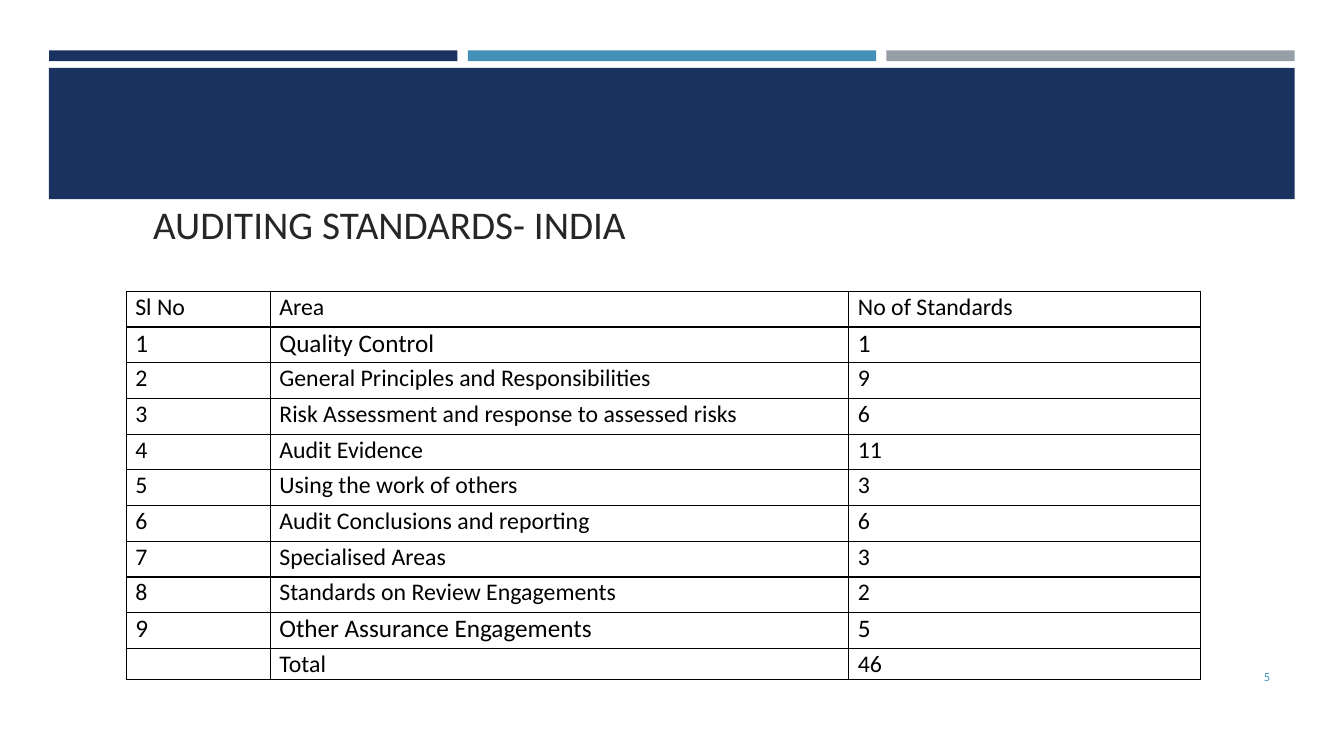
from lxml.etree import SubElement
from pptx import Presentation
from pptx.dml.color import RGBColor
from pptx.enum.shapes import MSO_SHAPE
from pptx.enum.text import MSO_ANCHOR, PP_ALIGN
from pptx.oxml.ns import qn
from pptx.util import Cm, Pt

FONT = "Calibri"
NAVY, BLUE, GREY, BLACK = "1A3260", "4590B8", "969FA7", "000000"

TITLE = "AUDITING STANDARDS- INDIA"
PAGE = "5"
ROWS = [
    ("Sl No", "Area", "No of Standards"),
    ("1", "Quality Control", "1"),
    ("2", "General Principles and Responsibilities", "9"),
    ("3", "Risk Assessment and response to assessed risks", "6"),
    ("4", "Audit Evidence", "11"),
    ("5", "Using the work of others", "3"),
    ("6", "Audit Conclusions and reporting", "6"),
    ("7", "Specialised Areas", "3"),
    ("8", "Standards on Review Engagements", "2"),
    ("9", "Other Assurance Engagements", "5"),
    ("", "Total", "46"),
]
LARGE_ROWS = {1, 9}
COL_WIDTHS = (3.63, 14.58, 8.86)
ROW_HEIGHT, TOTAL_HEIGHT = 0.9, 0.79
TABLE_LEFT, TABLE_TOP = 3.18, 7.34

BAR_LEFT, BAR_TOP, BAR_WIDTH, BAR_HEIGHT, BAR_GAP = 1.24, 1.27, 10.29, 0.27, 0.26
BANNER = (1.23, 1.71, 31.4, 3.31)
TITLE_BOX = (3.61, 2.72, 26.67, 3.63)
PAGE_BOX = (29.34, 16.54, 2.92, 1.02)


def rgb(value):
    return RGBColor.from_string(value)


def apply(obj, **values):
    for name, value in values.items():
        setattr(obj, name, value)


def add_bar(s, box, color):
    sp = s.shapes.add_shape(MSO_SHAPE.RECTANGLE, *map(Cm, box))
    sp.shadow.inherit = False
    sp.fill.solid()
    sp.fill.fore_color.rgb = rgb(color)
    sp.line.fill.background()


def write(p, text, size, color, align):
    p.alignment = align
    r = p.add_run()
    apply(r.font, name=FONT, size=Pt(size))
    r.font.color.rgb = rgb(color)
    r.text = text


def add_text(s, box, text, size, color, align, anchor):
    tf = s.shapes.add_textbox(*map(Cm, box)).text_frame
    apply(tf, word_wrap=True, vertical_anchor=anchor)
    write(tf.paragraphs[0], text, size, color, align)


def add_borders(cell):
    """Put a black 1 pt line on all four sides, ahead of the cell's fill."""
    tcPr = cell._tc.get_or_add_tcPr()
    for side in ("a:lnL", "a:lnR", "a:lnT", "a:lnB"):
        ln = SubElement(tcPr, qn(side), w=str(Pt(1)))
        fill = SubElement(ln, qn("a:solidFill"))
        SubElement(fill, qn("a:srgbClr"), val=BLACK)


def add_standards_table(s):
    heights = [ROW_HEIGHT] * (len(ROWS) - 1) + [TOTAL_HEIGHT]
    box = (TABLE_LEFT, TABLE_TOP, sum(COL_WIDTHS), sum(heights))
    table = s.shapes.add_table(len(ROWS), len(COL_WIDTHS), *map(Cm, box)).table
    apply(table, first_row=False, horz_banding=False)
    for column, width in zip(table.columns, COL_WIDTHS):
        column.width = Cm(width)
    for i, (row, height, texts) in enumerate(zip(table.rows, heights, ROWS)):
        row.height = Cm(height)
        size = 18 if i in LARGE_ROWS else 17
        for cell, text in zip(row.cells, texts):
            apply(cell, margin_left=Cm(0.23), margin_right=Cm(0.23),
                  margin_top=Cm(0.03), margin_bottom=Cm(0))
            add_borders(cell)
            cell.fill.background()
            p = cell.text_frame.paragraphs[0]
            if text:
                write(p, text, size, BLACK, PP_ALIGN.JUSTIFY)
            else:
                SubElement(p._p, qn("a:endParaRPr"), sz=str(size * 100))


def main():
    prs = Presentation()
    apply(prs, slide_width=Cm(33.87), slide_height=Cm(19.05))
    s = prs.slides.add_slide(prs.slide_layouts[6])
    for i, color in enumerate((NAVY, BLUE, GREY)):
        left = BAR_LEFT + i * (BAR_WIDTH + BAR_GAP)
        add_bar(s, (left, BAR_TOP, BAR_WIDTH, BAR_HEIGHT), color)
    add_bar(s, BANNER, NAVY)
    add_text(s, TITLE_BOX, TITLE, 28, "262626", PP_ALIGN.LEFT, MSO_ANCHOR.BOTTOM)
    add_standards_table(s)
    add_text(s, PAGE_BOX, PAGE, 9, BLUE, PP_ALIGN.RIGHT, MSO_ANCHOR.MIDDLE)
    prs.save("out.pptx")


if __name__ == "__main__":
    main()
